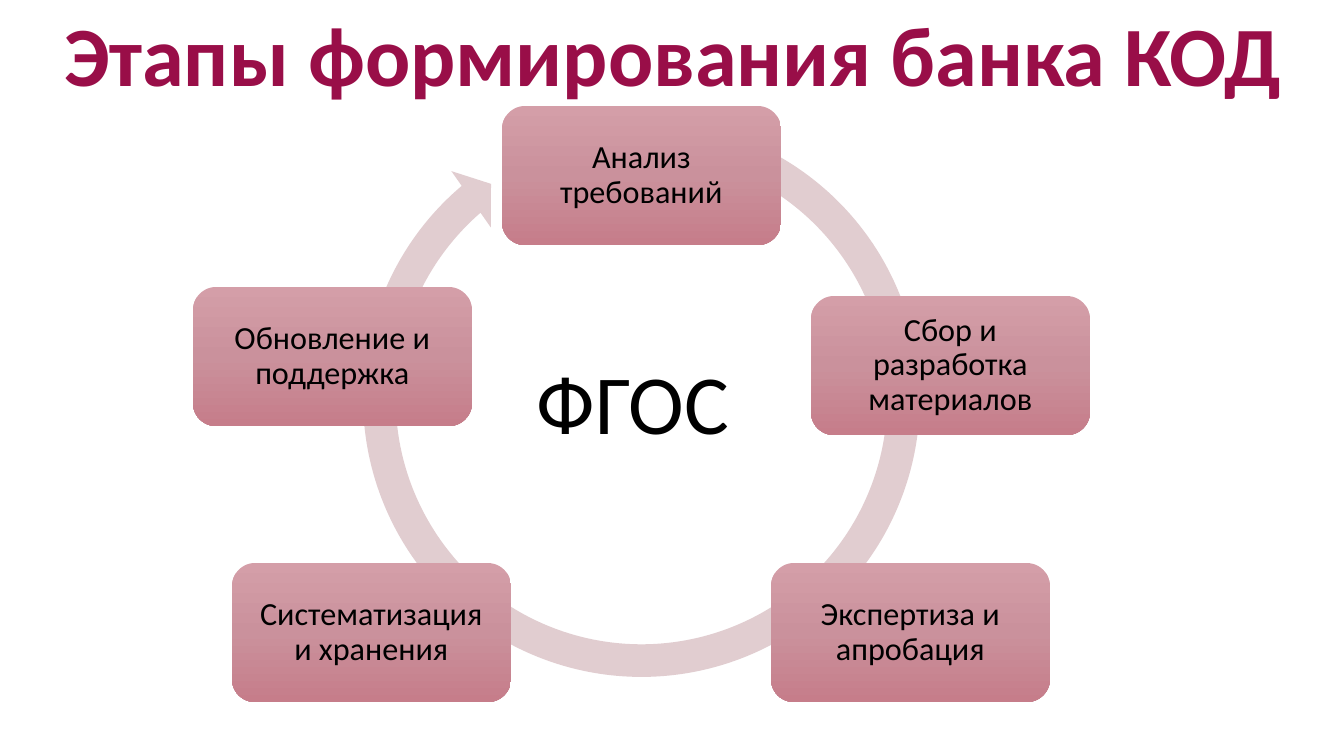
from copy import deepcopy

from pptx import Presentation
from pptx.dml.color import RGBColor
from pptx.enum.shapes import MSO_SHAPE as SHAPE
from pptx.enum.text import MSO_ANCHOR as ANCHOR, MSO_AUTO_SIZE as AUTOSIZE, PP_ALIGN as ALIGN
from pptx.oxml.ns import qn
from pptx.util import Emu, Pt

EMU_PER_PX = 914400 / 100.8


def px(n):
    return Emu(round(n * EMU_PER_PX))


def rgb(value):
    return RGBColor.from_string(value)


class SlideBuilder:
    FONT = "Calibri"
    TITLE = "990E48"
    INK = "000000"
    RING = "E1CDD0"
    GRADIENT = ((0, "D49EA8"), (0.5, "CA919C"), (1, "C67D8A"))

    def __init__(self, prs):
        self.slide = prs.slides.add_slide(prs.slide_layouts[5])

    def set_text(self, s, text, size, color=INK, bold=False, align=ALIGN.LEFT,
                 anchor=ANCHOR.MIDDLE, spacing=0.9):
        tf = s.text_frame
        tf.text = text
        tf.word_wrap = True
        tf.auto_size = AUTOSIZE.NONE
        tf.vertical_anchor = anchor
        p = tf.paragraphs[0]
        p.alignment = align
        p.line_spacing = spacing
        font = p.runs[0].font
        font.name, font.size, font.bold = self.FONT, Pt(size), bold
        font.color.rgb = rgb(color)

    def title(self, text, x, y, w, h):
        s = self.slide.shapes.title
        s.left, s.top, s.width, s.height = map(px, (x, y, w, h))
        self.set_text(s, text, 60.3, self.TITLE, bold=True)

    def shape(self, kind, x, y, w, h):
        s = self.slide.shapes.add_shape(kind, *map(px, (x, y, w, h)))
        s.shadow.inherit = False
        s.line.fill.background()
        return s

    def ring(self, x, y, size, adjustments):
        s = self.shape(SHAPE.CIRCULAR_ARROW, x, y, size, size)
        for i, value in enumerate(adjustments):
            s.adjustments[i] = value
        s.fill.solid()
        s.fill.fore_color.rgb = rgb(self.RING)

    def stage(self, text, x, y, w, h):
        s = self.shape(SHAPE.ROUNDED_RECTANGLE, x, y, w, h)
        s.fill.gradient()
        s.fill.gradient_angle = 270
        # The default gradient has two stops; this one needs three
        stops = s._element.spPr.find(".//" + qn("a:gsLst"))
        stops.append(deepcopy(stops[-1]))
        for stop, (position, color) in zip(s.fill.gradient_stops, self.GRADIENT):
            stop.position = position
            stop.color.rgb = rgb(color)
        tf = s.text_frame
        tf.margin_left = tf.margin_right = tf.margin_top = tf.margin_bottom = px(10)
        self.set_text(s, text, 23, align=ALIGN.CENTER)

    def label(self, text, x, y, w, h):
        s = self.slide.shapes.add_textbox(*map(px, (x, y, w, h)))
        self.set_text(s, text, 60, anchor=ANCHOR.TOP, spacing=1.0)


def main():
    prs = Presentation()
    prs.slide_width, prs.slide_height = px(1344), px(756)
    b = SlideBuilder(prs)

    b.title("Этапы формирования банка КОД", 54, 25, 1281, 68)

    # Cycle: arrow ring with the stages clockwise from the top
    b.ring(345, 102, 593, (0.055, 3.307, 137.676, 173.91, 0.058))
    stages = (
        ("Анализ требований", 502, 106),
        ("Сбор и разработка материалов", 811, 296),
        ("Экспертиза и апробация", 771, 563),
        ("Систематизация и хранения", 232, 563),
        ("Обновление и поддержка", 193, 287),
    )
    for text, x, y in stages:
        b.stage(text, x, y, 279, 139)

    # Centre of the cycle
    b.label("ФГОС", 527, 346, 297, 112)

    prs.save("out.pptx")


if __name__ == "__main__":
    main()
